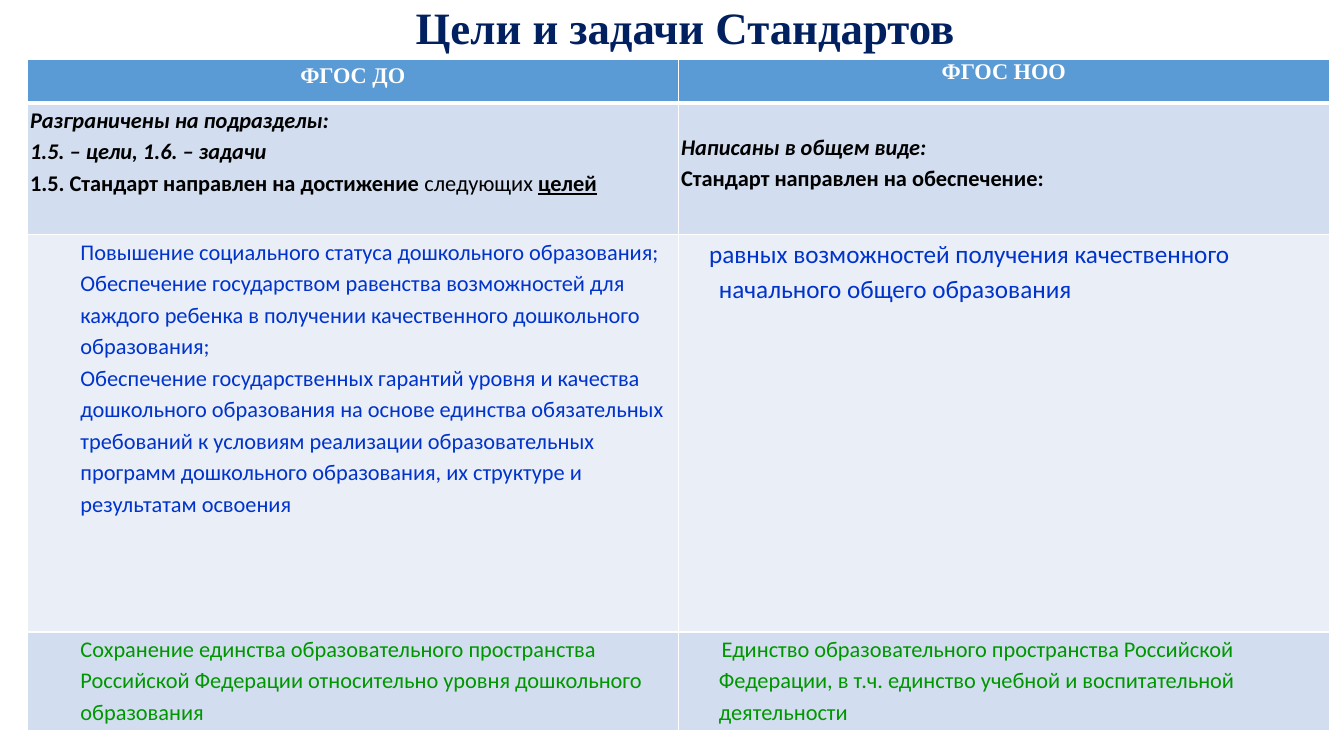
from lxml.etree import SubElement
from pptx import Presentation
from pptx.dml.color import RGBColor
from pptx.enum.text import MSO_ANCHOR, MSO_AUTO_SIZE, PP_ALIGN
from pptx.oxml.ns import qn
from pptx.util import Pt

NAVY = RGBColor(0x00, 0x20, 0x60)
WHITE = RGBColor(0xFF, 0xFF, 0xFF)
BLACK = RGBColor(0x00, 0x00, 0x00)
BLUE = RGBColor(0x00, 0x33, 0xCC)
GREEN = RGBColor(0x00, 0x96, 0x00)
HEADER_FILL = RGBColor(0x5B, 0x9B, 0xD5)
DARK_BAND = RGBColor(0xD2, 0xDE, 0xEF)
LIGHT_BAND = RGBColor(0xEA, 0xEF, 0xF7)

# Content: each cell is a list of paragraphs, each paragraph a list of (text, style)
TITLE = "Цели и задачи Стандартов"
ROWS = [
    ([[("ФГОС ДО", "header")]], [[("ФГОС НОО", "header")]]),
    (
        [
            [("Разграничены на подразделы:", "lead")],
            [("1.5. – цели, 1.6. – задачи", "lead")],
            [("1.5. Стандарт направлен на достижение", "strong"),
             (" следующих ", "plain"), ("целей", "underlined")],
        ],
        [
            [("Написаны в общем виде:", "lead")],
            [("Стандарт направлен на обеспечение:", "strong")],
        ],
    ),
    (
        [
            [("Повышение социального статуса дошкольного образования;", "goal")],
            [("Обеспечение государством равенства возможностей для каждого ребенка "
              "в получении качественного дошкольного образования;", "goal")],
            [("Обеспечение государственных гарантий уровня и качества дошкольного "
              "образования на основе единства обязательных требований к условиям "
              "реализации образовательных программ дошкольного образования, их "
              "структуре и результатам освоения", "goal")],
        ],
        [[("равных возможностей получения качественного начального общего "
           "образования", "large goal")]],
    ),
    (
        [[("Сохранение единства образовательного пространства Российской Федерации "
           "относительно уровня дошкольного образования", "unity")]],
        [[("Единство образовательного пространства Российской Федерации, в т.ч. "
           "единство учебной и воспитательной деятельности", "unity")]],
    ),
]

# Formats
BODY = {"name": "Calibri", "size": Pt(16), "bold": False, "italic": False}
STYLES = {
    "title": {"name": "Times New Roman", "size": Pt(32), "bold": True, "color": NAVY},
    "header": {"name": "Times New Roman", "size": Pt(16), "bold": True, "color": WHITE},
    "lead": {**BODY, "bold": True, "italic": True, "color": BLACK},
    "strong": {**BODY, "bold": True, "color": BLACK},
    "plain": {**BODY, "color": BLACK},
    "underlined": {**BODY, "bold": True, "underline": True, "color": BLACK},
    "goal": {**BODY, "color": BLUE},
    "large goal": {**BODY, "size": Pt(18), "color": BLUE},
    "unity": {**BODY, "color": GREEN},
}
ROW_HEIGHTS = [31, 94.3, 283.7, 70.6]
ROW_FILLS = [HEADER_FILL, DARK_BAND, LIGHT_BAND, DARK_BAND]
ROW_ALIGNMENTS = [PP_ALIGN.CENTER, PP_ALIGN.JUSTIFY, PP_ALIGN.LEFT, PP_ALIGN.LEFT]
COLUMN_WIDTH = 465
LINE_SPACING = 1.15
HEADER_RIGHT_SPACING = 1.0
INDENTS = {(2, 0): (36, 0), (3, 0): (36, 0), (2, 1): (27, -7), (3, 1): (27, 2)}
TOP_MARGINS = {(1, 1): 19.3}


def add_text(paragraph, text, style):
    run = paragraph.add_run()
    run.text = text
    for name, value in STYLES[style].items():
        if name == "color":
            run.font.color.rgb = value
        else:
            setattr(run.font, name, value)


def set_borders(cell, bottom_width):
    properties = cell._tc.get_or_add_tcPr()
    widths = {"lnL": 1, "lnR": 1, "lnT": 1, "lnB": bottom_width}
    for position, (side, width) in enumerate(widths.items()):
        line = SubElement(properties, qn(f"a:{side}"), w=str(Pt(width)))
        fill = SubElement(line, qn("a:solidFill"))
        SubElement(fill, qn("a:srgbClr"), val=str(WHITE))
        properties.insert(position, line)


def fill_cell(cell, row, column, paragraphs):
    margins = {"margin_left": 2, "margin_right": 2, "margin_bottom": 0,
               "margin_top": TOP_MARGINS.get((row, column), 0)}
    for name, value in margins.items():
        setattr(cell, name, Pt(value))
    cell.fill.solid()
    cell.fill.fore_color.rgb = ROW_FILLS[row]
    set_borders(cell, 3 if row == 0 else 1)
    left, first_line = INDENTS.get((row, column), (0, 0))
    for index, runs in enumerate(paragraphs):
        frame = cell.text_frame
        paragraph = frame.paragraphs[0] if index == 0 else frame.add_paragraph()
        paragraph.alignment = ROW_ALIGNMENTS[row]
        paragraph.line_spacing = (
            HEADER_RIGHT_SPACING if (row, column) == (0, 1) else LINE_SPACING)
        properties = paragraph._p.get_or_add_pPr()
        properties.set("marL", str(Pt(left)))
        properties.set("indent", str(Pt(first_line)))
        for text, style in runs:
            add_text(paragraph, text, style)


presentation = Presentation()
presentation.slide_width, presentation.slide_height = Pt(960), Pt(540)
slide = presentation.slides.add_slide(presentation.slide_layouts[5])

# Comparison table
table = slide.shapes.add_table(
    len(ROWS), 2, Pt(19.5), Pt(42.5), Pt(2 * COLUMN_WIDTH), Pt(sum(ROW_HEIGHTS))).table
for column in table.columns:
    column.width = Pt(COLUMN_WIDTH)
for row, cells in enumerate(ROWS):
    table.rows[row].height = Pt(ROW_HEIGHTS[row])
    for column, paragraphs in enumerate(cells):
        fill_cell(table.cell(row, column), row, column, paragraphs)

# Title
title = slide.shapes.title
title_box = {"left": 288, "top": 0, "width": 403, "height": 42.5}
for name, value in title_box.items():
    setattr(title, name, Pt(value))
title_frame = title.text_frame
title_format = {"word_wrap": False, "auto_size": MSO_AUTO_SIZE.SHAPE_TO_FIT_TEXT,
                "vertical_anchor": MSO_ANCHOR.MIDDLE}
for name, value in title_format.items():
    setattr(title_frame, name, value)
heading = title_frame.paragraphs[0]
heading.alignment = PP_ALIGN.CENTER
heading.line_spacing = 0.9
add_text(heading, TITLE, "title")

presentation.save("out.pptx")
